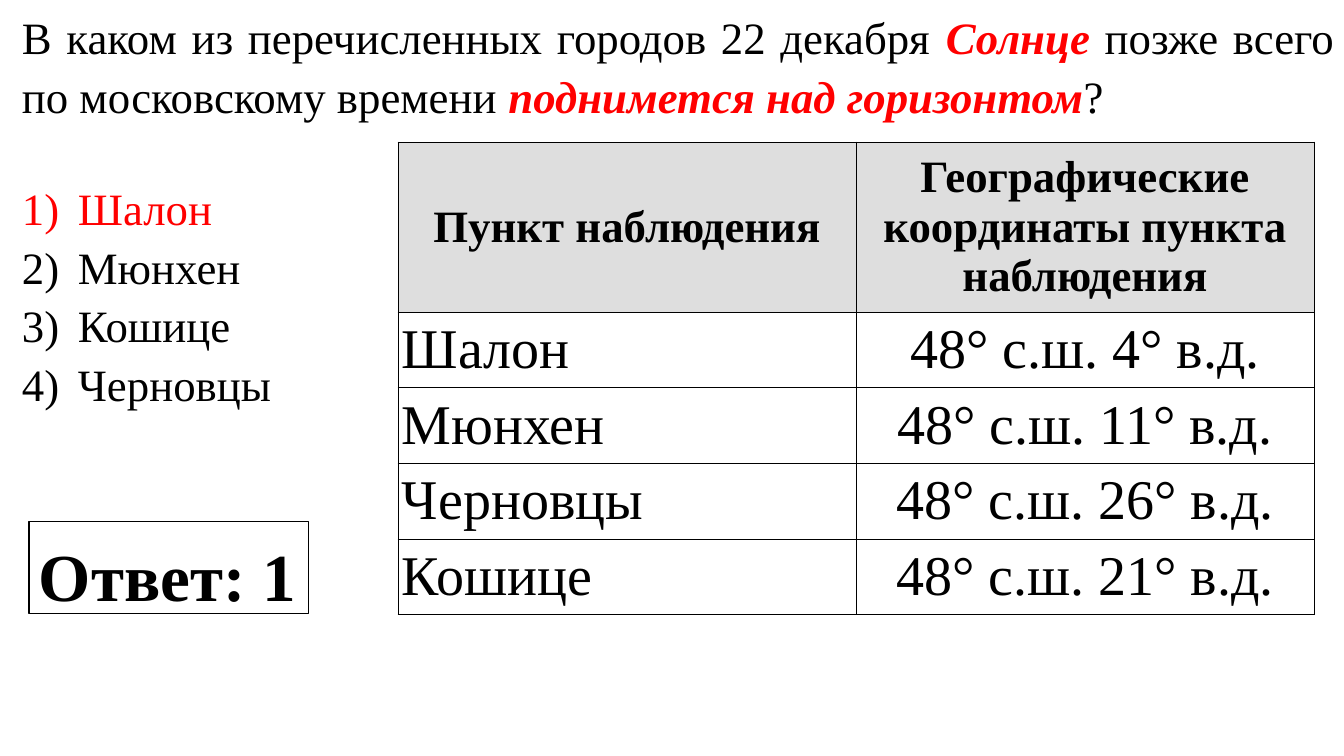
from lxml import etree
from pptx import Presentation
from pptx.dml.color import RGBColor
from pptx.enum.text import MSO_ANCHOR, PP_ALIGN
from pptx.oxml.ns import qn
from pptx.util import Emu, Pt

PX = 914400 * 10 // 1008
FONT = "Times New Roman"
BLACK = RGBColor(0x00, 0x00, 0x00)
RED = RGBColor(0xFF, 0x00, 0x00)
WHITE = RGBColor(0xFF, 0xFF, 0xFF)
GREY = RGBColor(0xDE, 0xDE, 0xDE)
LEFT, CENTER, JUSTIFY = PP_ALIGN.LEFT, PP_ALIGN.CENTER, PP_ALIGN.JUSTIFY
MIDDLE = MSO_ANCHOR.MIDDLE

LINE_SPACING = 1.09
BORDER = Pt(0.75)
CELL_INSET = 4
NUMBER_INDENT = 56
COLUMN_WIDTHS = (458, 458)
ROW_HEIGHTS = (170, 76, 75, 76, 75)

QUESTION = (
    ("В каком из перечисленных городов 22 декабря ", False),
    ("Солнце", True),
    (" позже всего по московскому времени ", False),
    ("поднимется над горизонтом", True),
    ("?", False),
)
OPTIONS = ("Шалон", "Мюнхен", "Кошице", "Черновцы")
CORRECT = "Шалон"
OBSERVATIONS = (
    ("Пункт наблюдения", "Географические координаты пункта наблюдения"),
    ("Шалон", "48° с.ш. 4° в.д."),
    ("Мюнхен", "48° с.ш. 11° в.д."),
    ("Черновцы", "48° с.ш. 26° в.д."),
    ("Кошице", "48° с.ш. 21° в.д."),
)


def px(length):
    return Emu(length * PX)


def add_text(para, text, size=32, color=BLACK, bold=False, italic=False):
    span = para.add_run()
    span.text = text
    span.font.name = FONT
    span.font.size = Pt(size)
    span.font.color.rgb = color
    span.font.bold = bold
    span.font.italic = italic


def add_box(page, left, top, width, height, wrap=True):
    box = page.shapes.add_textbox(px(left), px(top), px(width), px(height))
    box.text_frame.word_wrap = wrap
    return box


def number_para(para):
    properties = para._p.get_or_add_pPr()
    properties.set("marL", str(px(NUMBER_INDENT)))
    properties.set("indent", str(-px(NUMBER_INDENT)))
    etree.SubElement(properties, qn("a:buAutoNum"), type="arabicParenR")


def add_question(page):
    frame = add_box(page, 12, 0, 1332, 390).text_frame
    para = frame.paragraphs[0]
    para.alignment = JUSTIFY
    para.line_spacing = LINE_SPACING
    for text, key in QUESTION:
        add_text(para, text, color=RED if key else BLACK, bold=key, italic=key)
    para.space_after = px(54)
    for option in OPTIONS:
        para = frame.add_paragraph()
        para.alignment = JUSTIFY
        para.line_spacing = LINE_SPACING
        number_para(para)
        add_text(para, option, color=RED if option == CORRECT else BLACK)


def border_cell(cell):
    properties = cell._tc.get_or_add_tcPr()
    for index, side in enumerate(("a:lnL", "a:lnR", "a:lnT", "a:lnB")):
        line = etree.Element(qn(side), w=str(BORDER))
        fill = etree.SubElement(line, qn("a:solidFill"))
        etree.SubElement(fill, qn("a:srgbClr"), val=str(BLACK))
        properties.insert(index, line)


def fill_cell(cell, text, header, alignment):
    cell.margin_left = cell.margin_right = px(CELL_INSET)
    cell.margin_top = cell.margin_bottom = px(CELL_INSET)
    cell.vertical_anchor = MIDDLE
    cell.fill.solid()
    cell.fill.fore_color.rgb = GREY if header else WHITE
    border_cell(cell)
    para = cell.text_frame.paragraphs[0]
    para.alignment = alignment
    add_text(para, text, size=32 if header else 40, bold=header)


def add_observations(page):
    table = page.shapes.add_table(
        len(ROW_HEIGHTS), len(COLUMN_WIDTHS), px(398), px(142),
        px(sum(COLUMN_WIDTHS)), px(sum(ROW_HEIGHTS))).table
    for column, width in zip(table.columns, COLUMN_WIDTHS):
        column.width = px(width)
    for row, height in zip(table.rows, ROW_HEIGHTS):
        row.height = px(height)
    for row, texts in enumerate(OBSERVATIONS):
        for column, text in enumerate(texts):
            header = row == 0
            alignment = CENTER if header or column else LEFT
            fill_cell(table.cell(row, column), text, header, alignment)


def add_answer(page):
    box = add_box(page, 29, 522, 280, 92, wrap=False)
    box.line.color.rgb = BLACK
    box.line.width = BORDER
    para = box.text_frame.paragraphs[0]
    para.alignment = LEFT
    para.line_spacing = LINE_SPACING
    add_text(para, "Ответ: 1", size=48, bold=True)


def main():
    deck = Presentation()
    deck.slide_width = px(1344)
    deck.slide_height = px(756)
    page = deck.slides.add_slide(deck.slide_layouts[6])
    add_question(page)
    add_observations(page)
    add_answer(page)
    deck.save("out.pptx")


if __name__ == "__main__":
    main()
